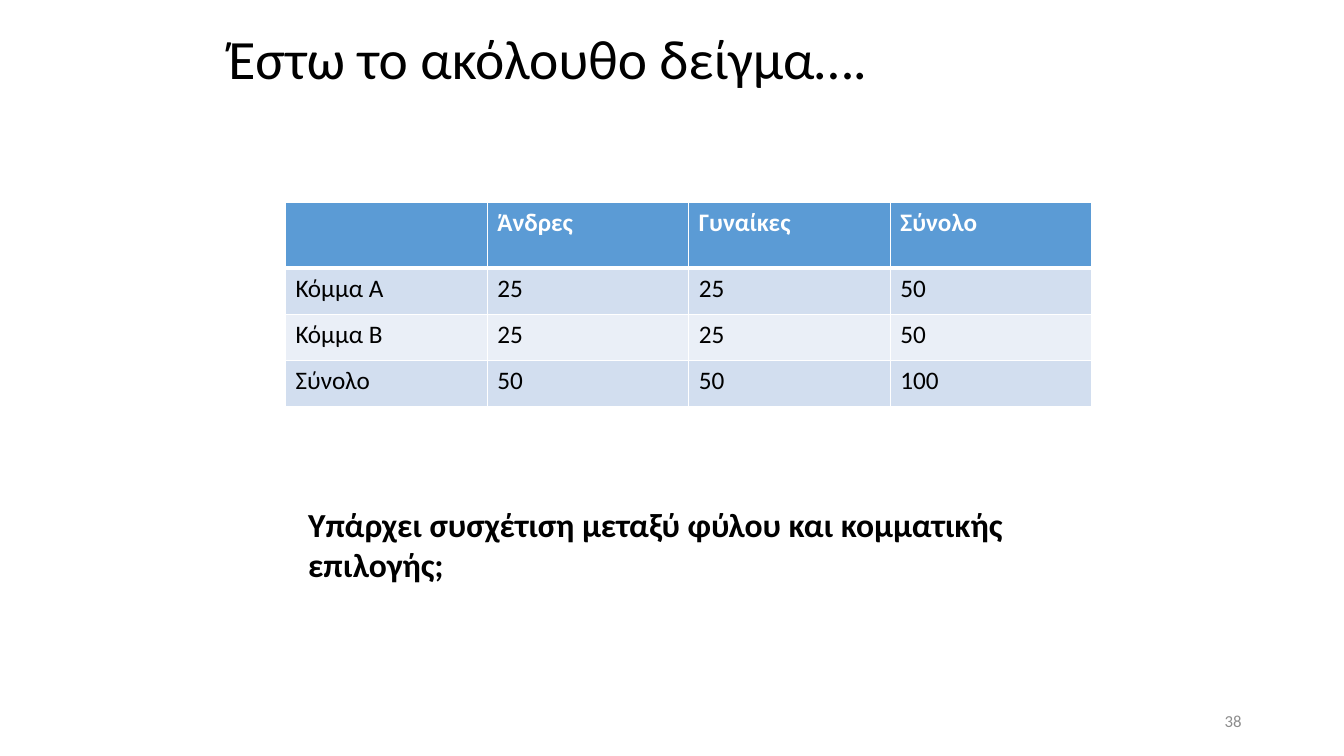
from lxml import etree
from pptx import Presentation
from pptx.dml.color import RGBColor
from pptx.enum import text
from pptx.oxml import ns
from pptx.util import Pt

ROWS = [
    ["", "Άνδρες", "Γυναίκες", "Σύνολο"],
    ["Κόμμα Α", "25", "25", "50"],
    ["Κόμμα Β", "25", "25", "50"],
    ["Σύνολο", "50", "50", "100"],
]
FILLS = ["5B9BD5", "D2DEEF", "EAEFF7", "D2DEEF"]


def rgb(code):
    return RGBColor.from_string(code)


def style(para, size, color, bold=False):
    for run in para.runs:
        font = run.font
        font.name = "Calibri"
        font.size = Pt(size)
        font.bold = bold
        font.color.rgb = rgb(color)


def label(slide, box, words, size, color="000000", bold=False,
          anchor=text.MSO_ANCHOR.MIDDLE, align=text.PP_ALIGN.LEFT, lead=1.0):
    frame = slide.shapes.add_textbox(*map(Pt, box)).text_frame
    frame.word_wrap = True
    frame.vertical_anchor = anchor
    frame.text = words
    para = frame.paragraphs[0]
    para.alignment = align
    para.line_spacing = lead
    style(para, size, color, bold)


def edge(cell, side, width):
    props = cell._tc.get_or_add_tcPr()
    line = etree.SubElement(props, ns.qn("a:ln" + side), w=str(Pt(width)))
    fill = etree.SubElement(line, ns.qn("a:solidFill"))
    etree.SubElement(fill, ns.qn("a:srgbClr"), val="FFFFFF")


def grid(slide, left, top, width, heights):
    frame = slide.shapes.add_table(
        len(ROWS), len(ROWS[0]), Pt(left), Pt(top), Pt(width), Pt(sum(heights)))
    table = frame.table
    for r, (words, shade, high) in enumerate(zip(ROWS, FILLS, heights)):
        table.rows[r].height = Pt(high)
        head = r == 0
        for c, word in enumerate(words):
            cell = table.cell(r, c)
            cell.text = word
            para = cell.text_frame.paragraphs[0]
            para.font.size = Pt(18)
            style(para, 18, "FFFFFF" if head else "000000", head)
            edge(cell, "L", 1)
            edge(cell, "R", 1)
            edge(cell, "T", 3 if r == 1 else 1)
            edge(cell, "B", 3 if head else 1)
            cell.fill.solid()
            cell.fill.fore_color.rgb = rgb(shade)


def main():
    deck = Presentation()
    deck.slide_width, deck.slide_height = Pt(960), Pt(540)
    slide = deck.slides.add_slide(deck.slide_layouts[6])
    label(slide, (156, 21.6, 648, 44.6), "Έστω το ακόλουθο δείγμα….", 39.6, lead=0.9)
    label(slide, (678, 500.5, 216, 28.75), "38", 12, "8C8C8C",
          align=text.PP_ALIGN.RIGHT)
    grid(slide, 204, 144.7, 576, [46.8, 33, 33, 33])
    label(slide, (213, 356.4, 534, 65.5),
          "Υπάρχει συσχέτιση μεταξύ φύλου και κομματικής επιλογής;",
          24, bold=True, anchor=text.MSO_ANCHOR.TOP)
    deck.save("out.pptx")


if __name__ == "__main__":
    main()
